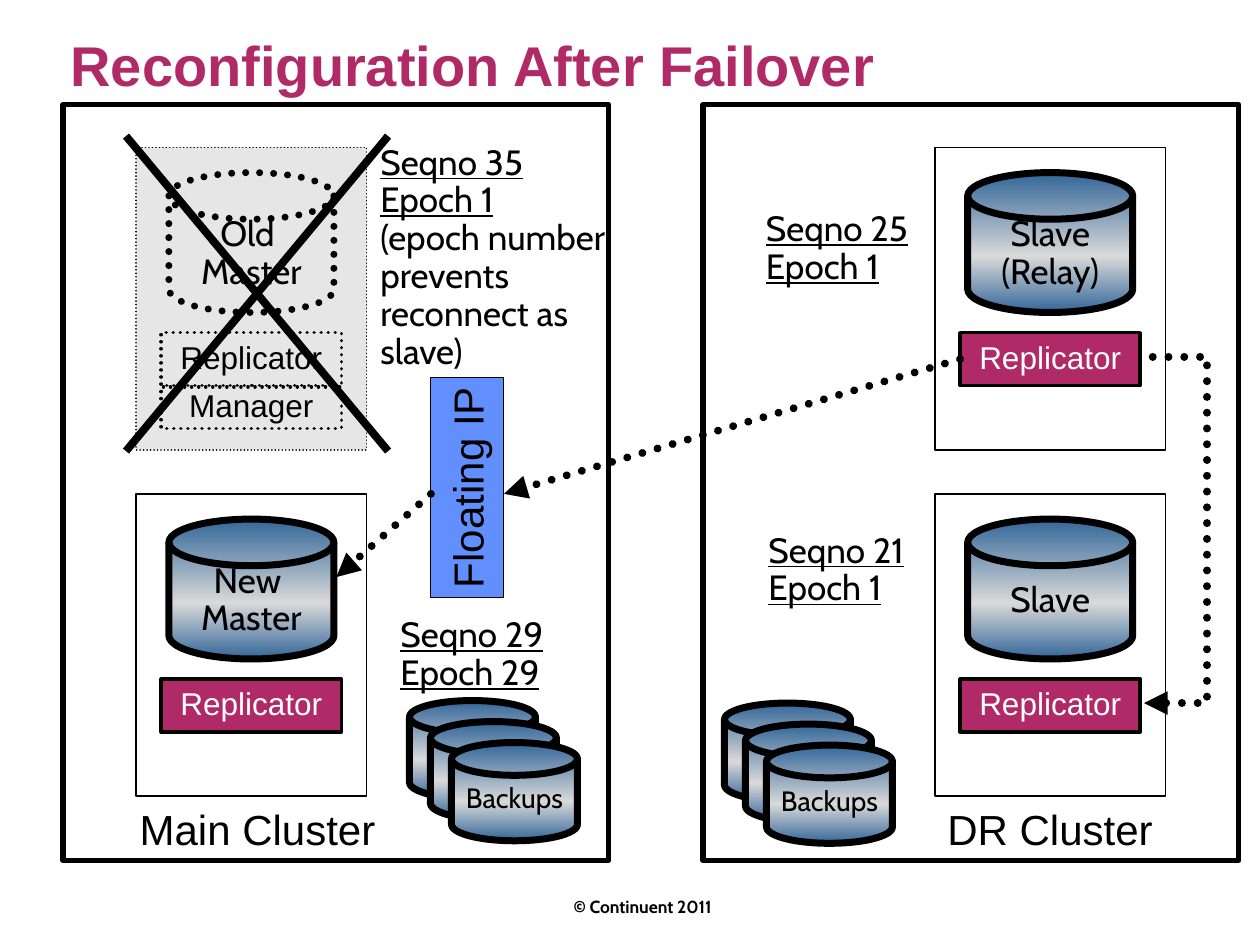
from copy import deepcopy

from lxml import etree
from pptx import Presentation
from pptx.dml.color import RGBColor
from pptx.enum.dml import MSO_LINE
from pptx.enum.shapes import MSO_CONNECTOR, MSO_SHAPE
from pptx.enum.text import MSO_ANCHOR, MSO_AUTO_SIZE, PP_ALIGN
from pptx.oxml.ns import qn
from pptx.util import Inches, Pt

RECT = MSO_SHAPE.RECTANGLE
DISK = MSO_SHAPE.FLOWCHART_MAGNETIC_DISK
STRAIGHT = MSO_CONNECTOR.STRAIGHT
DOTTED = MSO_LINE.ROUND_DOT
LEFT, CENTER = PP_ALIGN.LEFT, PP_ALIGN.CENTER
TOP, MIDDLE = MSO_ANCHOR.TOP, MSO_ANCHOR.MIDDLE


class Theme:
    black = RGBColor.from_string("000000")
    white = RGBColor.from_string("FFFFFF")
    accent = RGBColor.from_string("B12A68")
    gray = RGBColor.from_string("E6E6E6")
    blue = RGBColor.from_string("618FFD")
    steel = RGBColor.from_string("336699")
    silver = RGBColor.from_string("D9D9D9")
    disk_stops = ((0, steel), (0.6, silver), (1, steel))
    sans, body = "Arial", "Cabin"
    title, heading, label, small, backup, footer = 32, 24, 20, 18, 16, 10


def write(sp, text, size, font=Theme.body, color=Theme.black, align=LEFT, anchor=TOP,
          bold=False, underlined=0, spacing=0.9, wrap=False, inset=0.05):
    tf = sp.text_frame
    tf.auto_size = MSO_AUTO_SIZE.NONE
    tf.word_wrap = wrap
    tf.vertical_anchor = anchor
    tf.margin_left = tf.margin_right = Inches(0.1)
    tf.margin_top = tf.margin_bottom = Inches(inset)
    for i, line in enumerate(text.split("\n")):
        p = tf.paragraphs[0] if i == 0 else tf.add_paragraph()
        p.alignment = align
        p.line_spacing = spacing
        r = p.add_run()
        r.text = line
        r.font.name = font
        r.font.size = Pt(size)
        r.font.bold = bold
        r.font.underline = i < underlined
        r.font.color.rgb = color


def add_block(kind, box, weight, fill=None, dotted=False):
    sp = s.shapes.add_shape(kind, *map(Inches, box))
    sp.shadow.inherit = False
    if fill is not None:
        sp.fill.solid()
        sp.fill.fore_color.rgb = fill
    elif kind == DISK:
        sp.fill.gradient()
        sp.fill.gradient_angle = 270
        stops = sp._element.spPr.find(".//" + qn("a:gsLst"))
        stops.insert(1, deepcopy(stops[0]))
        for stop, (position, color) in zip(sp.fill.gradient_stops, Theme.disk_stops):
            stop.position = position
            stop.color.rgb = color
    else:
        sp.fill.background()
    sp.line.color.rgb = Theme.black
    sp.line.width = Pt(weight)
    if dotted:
        sp.line.dash_style = DOTTED
        sp._element.spPr.find(qn("a:ln")).set("cap", "rnd")
    return sp


prs = Presentation()
prs.slide_width, prs.slide_height = Inches(10), Inches(7.5)
s = prs.slides.add_slide(prs.slide_layouts[5])

title = s.shapes.title
title.left, title.top, title.width, title.height = map(Inches, (0.46, 0.25, 9.05, 0.75))
write(title, "Reconfiguration After Failover", Theme.title, Theme.sans, Theme.accent,
      bold=True, wrap=True)

main_x, dr_x = 1.08, 7.42
upper_y, lower_y = 1.17, 3.92
nodes = [
    (main_x, upper_y, "Old \nMaster", False),
    (dr_x, upper_y, "Slave\n(Relay)", True),
    (main_x, lower_y, "New \nMaster", True),
    (dr_x, lower_y, "Slave", True),
]
replicators = {}
for x, y, name, live in nodes:
    box_fill = Theme.white if live else Theme.gray
    add_block(RECT, (x, y, 1.83, 2.4), 1, box_fill, not live)
    disk = add_block(DISK, (x + 0.26, y + 0.2, 1.31, 1.11), 4,
                     None if live else Theme.gray, not live)
    write(disk, name, Theme.label, align=CENTER, anchor=MIDDLE)
    parts = [("Replicator", 1.47, 0.42)]
    if not live:
        parts.append(("Manager", 1.9, 0.33))
    for part, dy, height in parts:
        sp = add_block(RECT, (x + 0.2, y + dy, 1.43, height), 2,
                       Theme.accent if live else Theme.gray, not live)
        write(sp, part, Theme.small, Theme.sans, Theme.white if live else Theme.black,
              CENTER, MIDDLE, wrap=True, inset=0.02)
        replicators.setdefault((x, y), sp)

floating_ip = add_block(RECT, (2.83, 3.58, 1.75, 0.58), 0.75, Theme.blue)
floating_ip.rotation = 270
write(floating_ip, "Floating IP", Theme.heading, Theme.sans, align=CENTER,
      anchor=MIDDLE, spacing=1)

for x, width in ((0.5, 4.33), (5.58, 4.25)):
    add_block(RECT, (x, 0.83, width, 6), 3)

for x, y in ((5.75, 5.58), (3.25, 5.56)):
    for i in range(3):
        disk = add_block(DISK, (x + i / 6, y + i / 6, 1, 0.78), 4)
    write(disk, "Backups", Theme.backup, align=CENTER, anchor=MIDDLE)

links = [
    ((7.62, 2.85), (4, 3.92), True),
    ((3.42, 3.92), (2.67, 4.58), True),
    ((1, 1.08), (3.08, 3.58), False),
    ((1, 3.58), (3.08, 1.08), False),
]
lines = []
for start, end, dotted in links:
    link = s.shapes.add_connector(STRAIGHT, *map(Inches, start + end))
    lines.append((link, dotted, "a:tailEnd"))
lines[0][0].begin_connect(replicators[dr_x, upper_y], 1)

builder = s.shapes.build_freeform(Inches(9.08), Inches(5.58))
builder.add_line_segments(
    [(Inches(x), Inches(y)) for x, y in ((9.58, 5.58), (9.58, 2.83), (9.08, 2.83))],
    close=False)
relay_path = builder.convert_to_shape()
relay_path.fill.background()
lines.append((relay_path, True, "a:headEnd"))

for sp, dotted, arrow_end in lines:
    sp.line.color.rgb = Theme.black
    sp.line.width = Pt(4.5)
    spPr = sp._element.spPr
    if dotted:
        sp.line.dash_style = DOTTED
        ln = spPr.find(qn("a:ln"))
        ln.set("cap", "rnd")
        etree.SubElement(ln, qn(arrow_end), type="triangle")
    etree.SubElement(spPr, qn("a:effectLst"))

sequence = dict(size=Theme.label, underlined=2)
cluster = dict(size=Theme.heading, font=Theme.sans, spacing=1)
texts = [
    ((5.98, 1.63, 1.39, 0.7), "Seqno 25\nEpoch 1", sequence),
    ((6, 4.18, 1.39, 0.7), "Seqno 21\nEpoch 1", sequence),
    ((3.08, 4.85, 1.39, 0.7), "Seqno 29\nEpoch 29", sequence),
    ((2.92, 1.1, 2.31, 1.9),
     "Seqno 35\nEpoch 1\n(epoch number prevents reconnect as slave)",
     dict(sequence, wrap=True)),
    ((1.01, 6.33, 2.07, 0.5), "Main Cluster", cluster),
    ((7.42, 6.33, 1.83, 0.5), "DR Cluster", cluster),
    ((2.6, 7.08, 5, 0.25), "© Continuent 2011",
     dict(size=Theme.footer, bold=True, align=CENTER, wrap=True)),
]
for box, text, style in texts:
    write(s.shapes.add_textbox(*map(Inches, box)), text, **style)

prs.save("out.pptx")
